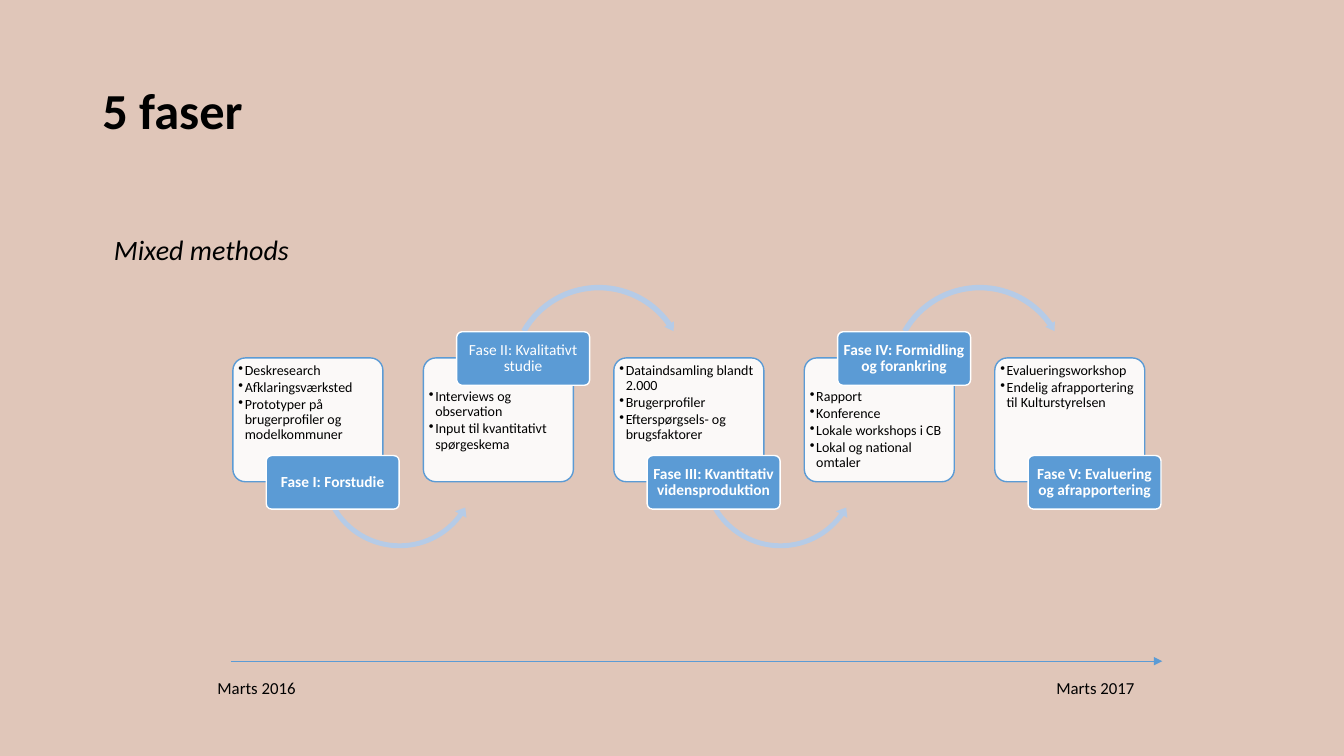
"""Build a slide showing five project phases along a timeline."""
from dataclasses import dataclass

from lxml import etree
from pptx import Presentation
from pptx import util as u
from pptx.dml.color import RGBColor
from pptx.enum import shapes, text
from pptx.oxml import ns

COLORS = {
    "background": "E0C6B9",
    "blue": "5B9BD5",
    "arrow": "B5CBE7",
    "white": "FFFFFF",
    "black": "000000",
}
FONT = "Calibri"
FIRST_LEFT, PITCH = 5.87, 4.8
CARD_TOP, CARD_W, CARD_H = 9.02, 3.78, 3.12
TAG_SHIFT, TAG_W, TAG_H = 0.84, 3.35, 1.35
INSET, RAISED_INSET = 0.05, 0.71


@dataclass
class Phase:
    title: str
    points: list[str]
    bold: bool = True


@dataclass
class Side:
    tag_top: float
    text_inset: float
    arrow: int
    arrow_shift: float
    arrow_top: float
    arrow_size: float
    adjustments: tuple[float, ...]


@dataclass
class Label:
    text: str
    left: float
    top: float
    width: float
    height: float
    size: int
    bold: bool = False
    italic: bool = False
    anchor: int = text.MSO_ANCHOR.TOP


PHASES = [
    Phase("Fase I: Forstudie", [
        "Deskresearch", "Afklaringsværksted",
        "Prototyper på brugerprofiler og modelkommuner"]),
    Phase("Fase II: Kvalitativt studie", [
        "Interviews og observation", "Input til kvantitativt spørgeskema"], bold=False),
    Phase("Fase III: Kvantitativ vidensproduktion", [
        "Dataindsamling blandt 2.000", "Brugerprofiler",
        "Efterspørgsels- og brugsfaktorer"]),
    Phase("Fase IV: Formidling og forankring", [
        "Rapport", "Konference", "Lokale workshops i CB", "Lokal og national omtaler"]),
    Phase("Fase V: Evaluering og afrapportering", [
        "Evalueringsworkshop", "Endelig afrapportering til Kulturstyrelsen"]),
]
LOW = Side(11.48, INSET, shapes.MSO_SHAPE.LEFT_CIRCULAR_ARROW, 2.13, 9.78, 4.14,
           (0.03, 3.79, 21.54, 90.25, 0.04))
HIGH = Side(8.36, RAISED_INSET, shapes.MSO_SHAPE.CIRCULAR_ARROW, 2.11, 7.11, 4.62,
            (0.03, 3.36, 194.88, 125.76, 0.03))
LABELS = [
    Label("5 faser", 2.33, 1.01, 29.21, 3.68, 36, bold=True, anchor=text.MSO_ANCHOR.MIDDLE),
    Label("Mixed methods", 2.62, 5.82, 5.51, 1.07, 20, italic=True),
    Label("Marts 2016", 5.23, 17.02, 2.92, 1.07, 12),
    Label("Marts 2017", 26.37, 17.02, 2.92, 1.07, 12),
]


def rgb(name: str) -> RGBColor:
    """Return the named colour."""
    return RGBColor.from_string(COLORS[name])


def add_run(p, words: str, size: int, color: str, bold: bool = False, italic: bool = False) -> None:
    """Add one styled run to a paragraph."""
    p.line_spacing = 0.9
    r = p.add_run()
    r.text = words
    r.font.name, r.font.size = FONT, u.Pt(size)
    r.font.bold, r.font.italic = bold, italic
    r.font.color.rgb = rgb(color)


def add_label(s, label: Label) -> None:
    """Add a free text label."""
    sp = s.shapes.add_textbox(u.Cm(label.left), u.Cm(label.top), u.Cm(label.width), u.Cm(label.height))
    tf = sp.text_frame
    tf.word_wrap = True
    tf.vertical_anchor = label.anchor
    add_run(tf.paragraphs[0], label.text, label.size, "black", label.bold, label.italic)


def add_box(s, left: float, top: float, width: float, height: float, fill: str, line: str):
    """Add a rounded box with narrow text margins."""
    sp = s.shapes.add_shape(shapes.MSO_SHAPE.ROUNDED_RECTANGLE,
                            u.Cm(left), u.Cm(top), u.Cm(width), u.Cm(height))
    sp.adjustments[0] = 0.1
    sp.shadow.inherit = False
    sp.fill.solid()
    sp.fill.fore_color.rgb = rgb(fill)
    sp.line.color.rgb = rgb(line)
    sp.line.width = u.Pt(1)
    tf = sp.text_frame
    tf.word_wrap = True
    tf.margin_left = tf.margin_right = tf.margin_top = tf.margin_bottom = u.Cm(INSET)
    return sp


def add_card(s, left: float, points: list[str], text_inset: float) -> None:
    """Add a translucent card with a bulleted list."""
    sp = add_box(s, left, CARD_TOP, CARD_W, CARD_H, "white", "blue")
    color = sp.fill._xPr.find(".//" + ns.qn("a:srgbClr"))
    etree.SubElement(color, ns.qn("a:alpha"), val="90000")
    tf = sp.text_frame
    tf.vertical_anchor = text.MSO_ANCHOR.TOP
    tf.margin_top = u.Cm(text_inset)
    for i, point in enumerate(points):
        p = tf.add_paragraph() if i else tf.paragraphs[0]
        p.alignment = text.PP_ALIGN.LEFT
        p.space_after = u.Pt(1.3)
        add_run(p, point, 10, "black")
        pPr = p._p.get_or_add_pPr()
        pPr.set("marL", str(u.Cm(0.16)))
        pPr.set("indent", str(-u.Cm(0.16)))
        etree.SubElement(pPr, ns.qn("a:buChar"), char="•")


def add_arrow(s, left: float, side: Side) -> None:
    """Add the curved arrow leading to the next phase."""
    sp = s.shapes.add_shape(side.arrow, u.Cm(left + side.arrow_shift), u.Cm(side.arrow_top),
                            u.Cm(side.arrow_size), u.Cm(side.arrow_size))
    for i, value in enumerate(side.adjustments):
        sp.adjustments[i] = value
    sp.shadow.inherit = False
    sp.fill.solid()
    sp.fill.fore_color.rgb = rgb("arrow")
    sp.line.fill.background()


def add_tag(s, left: float, phase: Phase, top: float) -> None:
    """Add the blue tag naming a phase."""
    sp = add_box(s, left + TAG_SHIFT, top, TAG_W, TAG_H, "blue", "white")
    tf = sp.text_frame
    tf.vertical_anchor = text.MSO_ANCHOR.MIDDLE
    p = tf.paragraphs[0]
    p.alignment = text.PP_ALIGN.CENTER
    add_run(p, phase.title, 11, "white", phase.bold)


def add_timeline(s) -> None:
    """Add the thin timeline arrow."""
    cx = s.shapes.add_connector(shapes.MSO_CONNECTOR.STRAIGHT,
                                u.Cm(5.82), u.Cm(16.66), u.Cm(29.29), u.Cm(16.66))
    cx.line.color.rgb = rgb("blue")
    cx.line.width = u.Pt(0.5)
    etree.SubElement(cx.line._get_or_add_ln(), ns.qn("a:tailEnd"), type="triangle")
    etree.SubElement(cx._element.spPr, ns.qn("a:effectLst"))


def main() -> None:
    """Build and save the slide."""
    prs = Presentation()
    prs.slide_width, prs.slide_height = u.Cm(33.87), u.Cm(19.05)
    s = prs.slides.add_slide(prs.slide_layouts[6])
    s.background.fill.solid()
    s.background.fill.fore_color.rgb = rgb("background")
    for label in LABELS:
        add_label(s, label)
    for i, phase in enumerate(PHASES):
        left = FIRST_LEFT + i * PITCH
        side = HIGH if i % 2 else LOW
        add_card(s, left, phase.points, side.text_inset)
        if i < len(PHASES) - 1:
            add_arrow(s, left, side)
        add_tag(s, left, phase, side.tag_top)
    add_timeline(s)
    prs.save("out.pptx")


if __name__ == "__main__":
    main()
